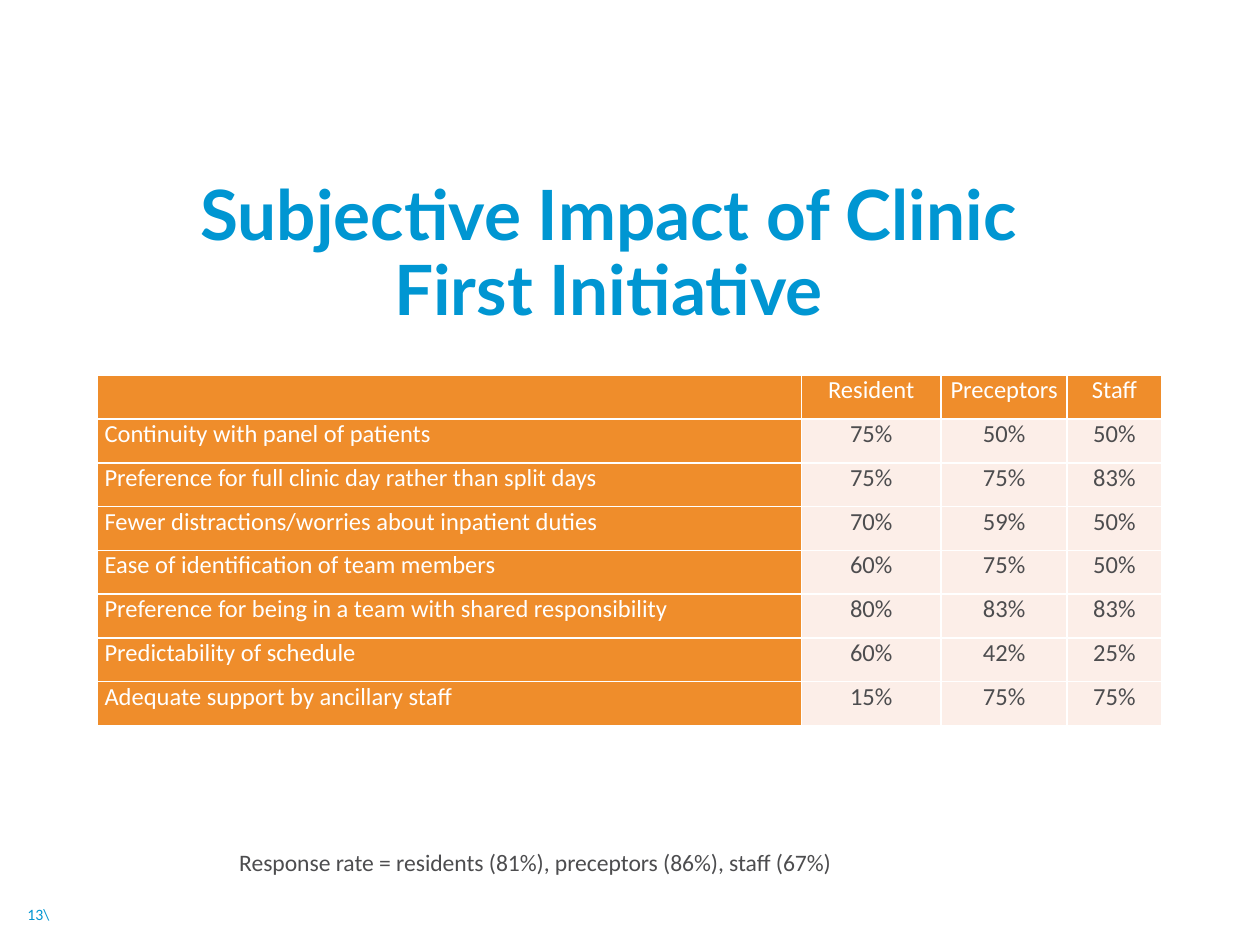
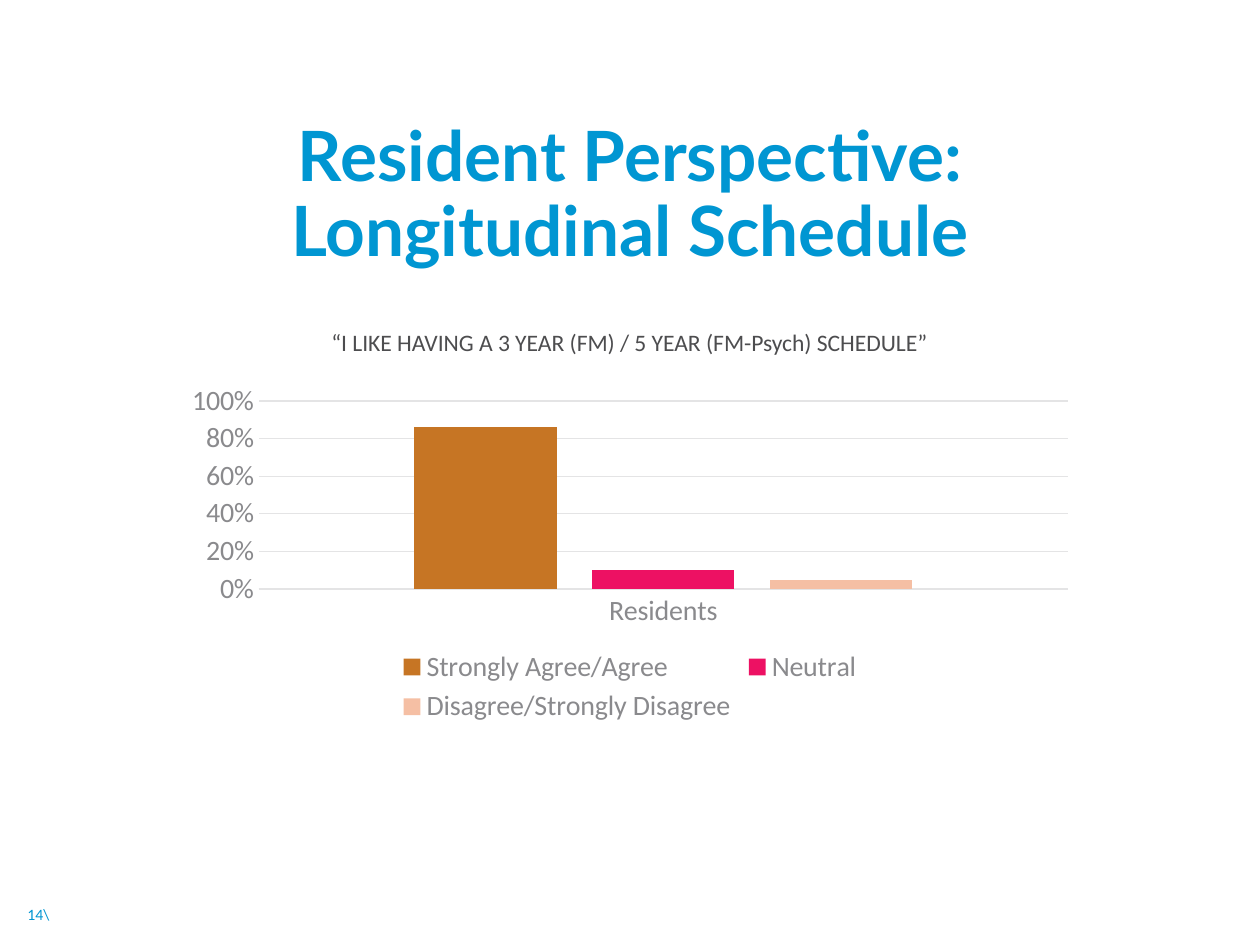
"""Build two slides on the clinic survey: a results table and a resident chart."""
from dataclasses import dataclass

from lxml.etree import SubElement
from pptx import Presentation
from pptx.chart.data import CategoryChartData
from pptx.dml.color import RGBColor
from pptx.enum.chart import XL_CHART_TYPE, XL_LEGEND_POSITION, XL_TICK_MARK
from pptx.enum.text import MSO_ANCHOR, MSO_AUTO_SIZE, PP_ALIGN
from pptx.oxml.ns import qn
from pptx.util import Inches, Pt


@dataclass(frozen=True)
class Theme:
    blue: str = "0096D2"
    orange: str = "EF8D2B"
    blush: str = "FCEEE8"
    ink: str = "4D4D4F"
    gray: str = "8A8A8D"
    rule: str = "E4E4E5"
    white: str = "FFFFFF"
    bars: tuple = ("C67524", "ED1163", "F5BFA4")
    head_font: str = "Lato"
    body_font: str = "Calibri"
    title: float = 39.6
    chart: float = 16
    cell: float = 14
    note: float = 13.5
    number: float = 9


theme = Theme()
left, center, right = PP_ALIGN.LEFT, PP_ALIGN.CENTER, PP_ALIGN.RIGHT


def style(font, size, color, name=theme.body_font, bold=False):
    """Apply type settings to a font."""
    font.size, font.name, font.bold = Pt(size), name, bold
    font.color.rgb = RGBColor.from_string(color)


def write(tf, text, size, color, align, name=theme.body_font, bold=False):
    """Fill a text frame with one styled paragraph."""
    tf.text = text
    p = tf.paragraphs[0]
    p.alignment = align
    for r in p.runs:
        style(r.font, size, color, name, bold)
    return p


prs = Presentation()
prs.slide_width, prs.slide_height = Inches(10), Inches(7.5)

titles = [
    ("Subjective Impact of Clinic First Initiative", (0.95, 1.74, 7.76, 0.58)),
    ("Resident Perspective: Longitudinal Schedule", (0.88, 1.27, 8.24, 0.58)),
]
notes = [
    ("Response rate = residents (81%), preceptors (86%), staff (67%)",
     (1.8, 6.68, 4.98, 0.33), left, False),
    ("“I LIKE HAVING A 3 YEAR (FM) / 5 YEAR (FM-Psych) SCHEDULE”",
     (1.32, 2.55, 7.35, 0.33), center, True),
]
for number, (title, box), (note, note_box, align, wrap) in zip((13, 14), titles, notes):
    s = prs.slides.add_slide(prs.slide_layouts[5])
    sp = s.shapes.title
    sp.left, sp.top, sp.width, sp.height = map(Inches, box)
    tf = sp.text_frame
    tf.auto_size, tf.vertical_anchor = MSO_AUTO_SIZE.NONE, MSO_ANCHOR.MIDDLE
    p = write(tf, title, theme.title, theme.blue, center, theme.head_font, True)
    p.line_spacing = 0.9

    tf = s.shapes.add_textbox(*map(Inches, note_box)).text_frame
    tf.word_wrap = wrap
    write(tf, note, theme.note, theme.ink, align)

    tf = s.shapes.add_textbox(0, Inches(7.11), Inches(0.49), Inches(0.3)).text_frame
    tf.word_wrap, tf.vertical_anchor = True, MSO_ANCHOR.MIDDLE
    write(tf, f"{number}\\", theme.number, theme.blue, right)

table_slide, chart_slide = prs.slides

rows = [
    ("", "Resident", "Preceptors", "Staff"),
    ("Continuity with panel of patients", "75%", "50%", "50%"),
    ("Preference for full clinic day rather than split days", "75%", "75%", "83%"),
    ("Fewer distractions/worries about inpatient duties", "70%", "59%", "50%"),
    ("Ease of identification of team members", "60%", "75%", "50%"),
    ("Preference for being in a team with shared responsibility", "80%", "83%", "83%"),
    ("Predictability of schedule", "60%", "42%", "25%"),
    ("Adequate support by ancillary staff", "15%", "75%", "75%"),
]
widths = (5.59, 1.11, 1, 0.75)
table = table_slide.shapes.add_table(
    len(rows), len(widths), Inches(0.77), Inches(2.98),
    Inches(sum(widths)), Inches(2.78)).table
for column, width in zip(table.columns, widths):
    column.width = Inches(width)
for i, row in enumerate(rows):
    for j, text in enumerate(row):
        cell = table.cell(i, j)
        heading = i == 0 or j == 0
        cell.margin_left = cell.margin_right = Inches(0.06)
        cell.margin_top = cell.margin_bottom = 0
        write(cell.text_frame, text, theme.cell,
              theme.white if heading else theme.ink, center if j else left)
        tc_pr = cell._tc.get_or_add_tcPr()
        for side in ("a:lnL", "a:lnR", "a:lnT", "a:lnB"):
            ln = SubElement(tc_pr, qn(side), w=str(Pt(1)))
            SubElement(SubElement(ln, qn("a:solidFill")), qn("a:srgbClr"), val=theme.white)
        cell.fill.solid()
        cell.fill.fore_color.rgb = RGBColor.from_string(
            theme.orange if heading else theme.blush)

data = CategoryChartData(number_format="0%")
data.categories = ["Residents"]
data.add_series("Strongly Agree/Agree", [0.86])
data.add_series("Neutral", [0.1])
data.add_series("Disagree/Strongly Disagree", [0.05])
chart = chart_slide.shapes.add_chart(
    XL_CHART_TYPE.COLUMN_CLUSTERED, Inches(1.38), Inches(2.99),
    Inches(7.24), Inches(2.8), data).chart
style(chart.font, theme.chart, theme.ink)
chart.has_title = False
chart.has_legend = True
chart.legend.position = XL_LEGEND_POSITION.BOTTOM
chart.legend.include_in_layout = False
style(chart.legend.font, theme.chart, theme.gray)

plot = chart.plots[0]
plot.gap_width, plot.overlap, plot.vary_by_categories = 219, -25, False
for series, color in zip(plot.series, theme.bars):
    series.format.fill.solid()
    series.format.fill.fore_color.rgb = RGBColor.from_string(color)

values = chart.value_axis
for axis in (chart.category_axis, values):
    axis.major_tick_mark = axis.minor_tick_mark = XL_TICK_MARK.NONE
    style(axis.tick_labels.font, theme.chart, theme.gray)
values.minimum_scale, values.maximum_scale, values.major_unit = 0, 1, 0.2
values.tick_labels.number_format = "0%"
values.tick_labels.number_format_is_linked = False
values.format.line.fill.background()
for line in (chart.category_axis.format.line, values.major_gridlines.format.line):
    line.width = Pt(0.75)
    line.color.rgb = RGBColor.from_string(theme.rule)

prs.save("out.pptx")
